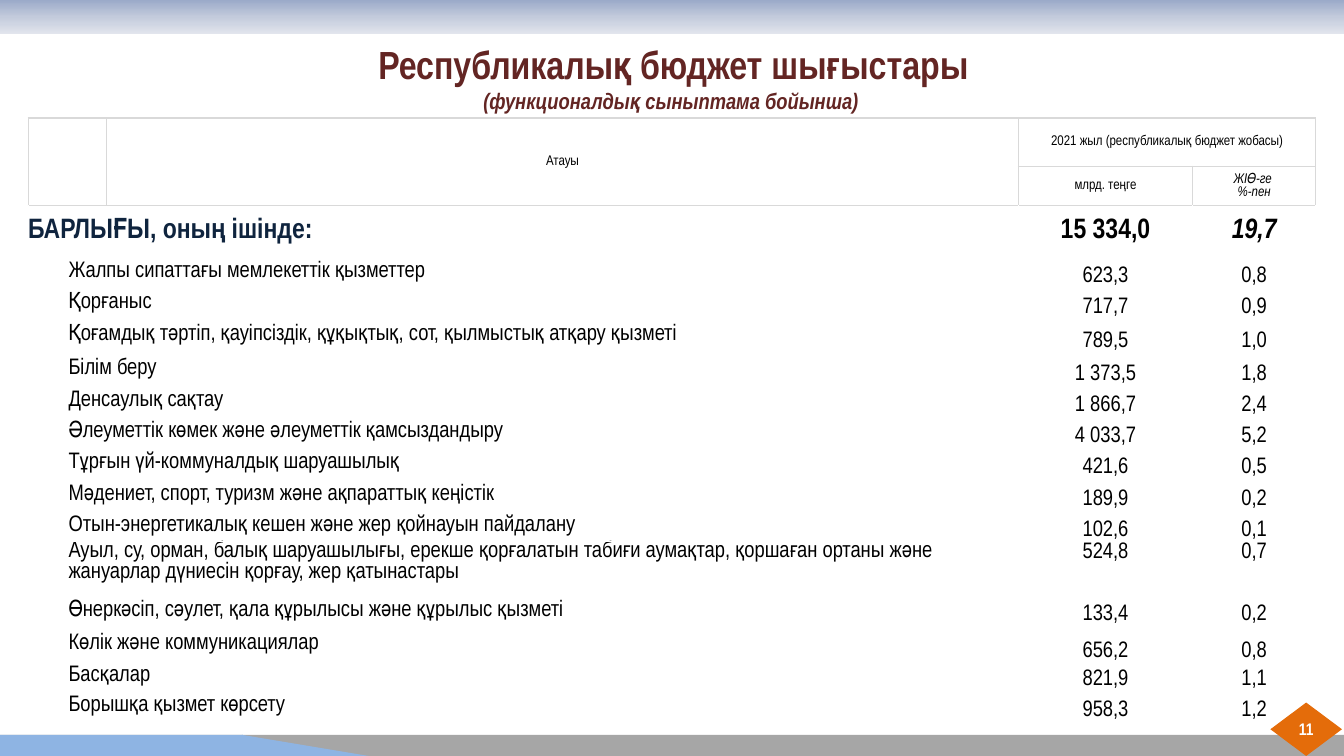
import copy

import lxml.etree
import pptx
import pptx.dml.color
import pptx.enum.shapes
import pptx.enum.text
import pptx.oxml.ns
import pptx.util

Inches = pptx.util.Inches
qn = pptx.oxml.ns.qn
SHAPES = pptx.enum.shapes.MSO_SHAPE
ANCHOR = pptx.enum.text.MSO_ANCHOR
ALIGN = pptx.enum.text.PP_ALIGN

FONT = "Arial Narrow"
GREY_LINE = "D9D9D9"
WHITE = "FFFFFF"
BLACK = "000000"
COLUMN_WIDTHS = [0.28, 0.5, 9.04, 1.73, 1.22]
ROW_HEIGHTS = [0.48, 0.39, 0.5] + [0.31] * 2 + [0.33] * 2 + [0.31] * 5 + [0.55, 0.28, 0.37, 0.28, 0.31]
TOTAL = ("БАРЛЫҒЫ, оның ішінде:", "15 334,0", "19,7")
EXPENSES = [
    ("Жалпы сипаттағы мемлекеттік қызметтер", "623,3", "0,8"),
    ("Қорғаныс", "717,7", "0,9"),
    ("Қоғамдық тәртіп, қауіпсіздік, құқықтық, сот, қылмыстық атқару қызметі", "789,5", "1,0"),
    ("Білім беру", "1 373,5", "1,8"),
    ("Денсаулық сақтау", "1 866,7", "2,4"),
    ("Әлеуметтік көмек және әлеуметтік қамсыздандыру", "4 033,7", "5,2"),
    ("Тұрғын үй-коммуналдық шаруашылық", "421,6", "0,5"),
    ("Мәдениет, спорт, туризм және ақпараттық кеңістік", "189,9", "0,2"),
    ("Отын-энергетикалық кешен және жер қойнауын пайдалану", "102,6", "0,1"),
    ("Ауыл, су, орман, балық шаруашылығы, ерекше қорғалатын табиғи аумақтар, "
     "қоршаған ортаны және жануарлар дүниесін қорғау, жер қатынастары", "524,8", "0,7"),
    ("Өнеркәсіп, сәулет, қала құрылысы және құрылыс қызметі", "133,4", "0,2"),
    ("Көлік және коммуникациялар", "656,2", "0,8"),
    ("Басқалар", "821,9", "1,1"),
    ("Борышқа қызмет көрсету", "958,3", "1,2"),
]
TWO_LINE_EXPENSE = 9


def color(value):
    return pptx.dml.color.RGBColor.from_string(value)


def format_para(para, size, tint, bold=False, italic=False, align=ALIGN.CENTER):
    para.alignment = align
    for span in para.runs:
        span.font.name = FONT
        span.font.size = pptx.util.Pt(size)
        span.font.color.rgb = color(tint)
        span.font.bold = bold
        span.font.italic = italic


def add_block(page, kind, left, top, width, height, fill):
    block = page.shapes.add_shape(kind, Inches(left), Inches(top), Inches(width), Inches(height))
    block.shadow.inherit = False
    block.line.fill.background()
    block.fill.solid()
    block.fill.fore_color.rgb = color(fill)
    return block


def add_top_band(page, left, top, width, height):
    band = add_block(page, SHAPES.RECTANGLE, left, top, width, height, WHITE)
    band.fill.gradient()
    band.fill.gradient_angle = 270
    stop_list = band._element.spPr.find(".//" + qn("a:gsLst"))
    stop_list.insert(1, copy.deepcopy(stop_list[0]))
    stops = [(0, "9BAAC9"), (0.5, "C3CBDC"), (1, "E2E5ED")]
    for stop, (position, tint) in zip(band.fill.gradient_stops, stops):
        stop.position = position
        stop.color.rgb = color(tint)


def add_footer(page, left, top, width, height):
    add_block(page, SHAPES.RECTANGLE, left, top, width, height, "A6A6A6")
    add_block(page, SHAPES.RECTANGLE, left, top, 2.41, height, "8EB4E3")
    add_block(page, SHAPES.RIGHT_TRIANGLE, left + 2.4, top, 1.26, height, "8EB4E3")


def add_title(page, left, top, width, height):
    title = page.shapes.title
    title.left, title.top = Inches(left), Inches(top)
    title.width, title.height = Inches(width), Inches(height)
    frame = title.text_frame
    frame.text = "Республикалық бюджет шығыстары\n(функционалдық сыныптама бойынша) "
    frame.auto_size = pptx.enum.text.MSO_AUTO_SIZE.SHAPE_TO_FIT_TEXT
    frame.vertical_anchor = ANCHOR.TOP
    heading, subtitle = frame.paragraphs
    format_para(heading, 28, "632523", bold=True)
    format_para(subtitle, 16, "632523", bold=True, italic=True)
    for para in frame.paragraphs:
        para.space_before = pptx.util.Pt(0)


def set_borders(cell, tint, top_tint):
    properties = cell._tc.get_or_add_tcPr()
    for side in ("L", "R", "T", "B"):
        line = lxml.etree.SubElement(properties, qn("a:ln" + side), w="12700")
        fill = lxml.etree.SubElement(line, qn("a:solidFill"))
        lxml.etree.SubElement(fill, qn("a:srgbClr"), val=top_tint if side == "T" else tint)


def prepare_cell(cell, row):
    set_borders(cell, GREY_LINE if row < 2 else WHITE, GREY_LINE if row < 3 else WHITE)
    cell.fill.background()
    cell.margin_left = cell.margin_right = cell.margin_top = cell.margin_bottom = 0
    para = cell.text_frame.paragraphs[0]
    lxml.etree.SubElement(para._p, qn("a:endParaRPr"), sz="1000")


def fill_cell(cell, text, size, anchor=ANCHOR.MIDDLE, tint=BLACK, **style):
    cell.text_frame.text = text
    cell.vertical_anchor = anchor
    for para in cell.text_frame.paragraphs:
        format_para(para, size, tint, **style)


def fill_value(cell, text, size, anchor, **style):
    cell.margin_left = cell.margin_right = cell.margin_top = Inches(0.01)
    fill_cell(cell, text, size, anchor, **style)


def fill_header(table):
    table.cell(0, 0).merge(table.cell(1, 1))
    table.cell(0, 2).merge(table.cell(1, 2))
    table.cell(0, 3).merge(table.cell(0, 4))
    fill_cell(table.cell(0, 2), "Атауы", 10)
    fill_cell(table.cell(0, 3), "2021 жыл (республикалық бюджет жобасы)", 10)
    fill_cell(table.cell(1, 3), "млрд. теңге", 10)
    fill_cell(table.cell(1, 4), "ЖІӨ-ге \n%-пен", 10, italic=True)


def fill_total(table, row):
    name, amount, share = TOTAL
    table.cell(row, 0).merge(table.cell(row, 2))
    fill_cell(table.cell(row, 0), name, 20, tint="0F243E", bold=True, align=ALIGN.LEFT)
    fill_value(table.cell(row, 3), amount, 20, ANCHOR.MIDDLE, bold=True)
    fill_value(table.cell(row, 4), share, 20, ANCHOR.MIDDLE, bold=True, italic=True)


def fill_expenses(table, first_row):
    for index, (name, amount, share) in enumerate(EXPENSES):
        row = first_row + index
        tall = index == TWO_LINE_EXPENSE
        name_cell = table.cell(row, 1)
        name_cell.merge(table.cell(row, 2))
        name_cell.margin_left = Inches(0.12)
        fill_cell(name_cell, name, 16, ANCHOR.TOP if tall else ANCHOR.MIDDLE, align=ALIGN.LEFT)
        for column, value in ((3, amount), (4, share)):
            fill_value(table.cell(row, column), value, 16, ANCHOR.TOP if tall else ANCHOR.BOTTOM)


def add_budget_table(page, left, top):
    frame = page.shapes.add_table(
        len(ROW_HEIGHTS), len(COLUMN_WIDTHS), Inches(left), Inches(top),
        Inches(sum(COLUMN_WIDTHS)), Inches(sum(ROW_HEIGHTS)))
    table = frame.table
    table.first_row = False
    table.horz_banding = False
    for column, width in zip(table.columns, COLUMN_WIDTHS):
        column.width = Inches(width)
    for index, height in enumerate(ROW_HEIGHTS):
        table.rows[index].height = Inches(height)
        for cell in table.rows[index].cells:
            prepare_cell(cell, index)
    fill_header(table)
    fill_total(table, 2)
    fill_expenses(table, 3)


def add_page_number(page, left, top, width, height):
    badge = add_block(page, SHAPES.FLOWCHART_DECISION, left, top, width, height, "E46C0A")
    frame = badge.text_frame
    frame.text = "11"
    frame.word_wrap = False
    frame.vertical_anchor = ANCHOR.MIDDLE
    format_para(frame.paragraphs[0], 12, WHITE, bold=True)


def main():
    deck = pptx.Presentation()
    deck.slide_width, deck.slide_height = Inches(13.33), Inches(7.5)
    page = deck.slides.add_slide(deck.slide_layouts[5])
    add_footer(page, 0, 7.29, 13.33, 0.21)
    add_top_band(page, -0.02, 0, 13.36, 0.34)
    add_title(page, 0, 0.35, 13.36, 0.84)
    add_budget_table(page, 0.28, 1.17)
    add_page_number(page, 12.6, 6.97, 0.71, 0.53)
    deck.save("out.pptx")


if __name__ == "__main__":
    main()
